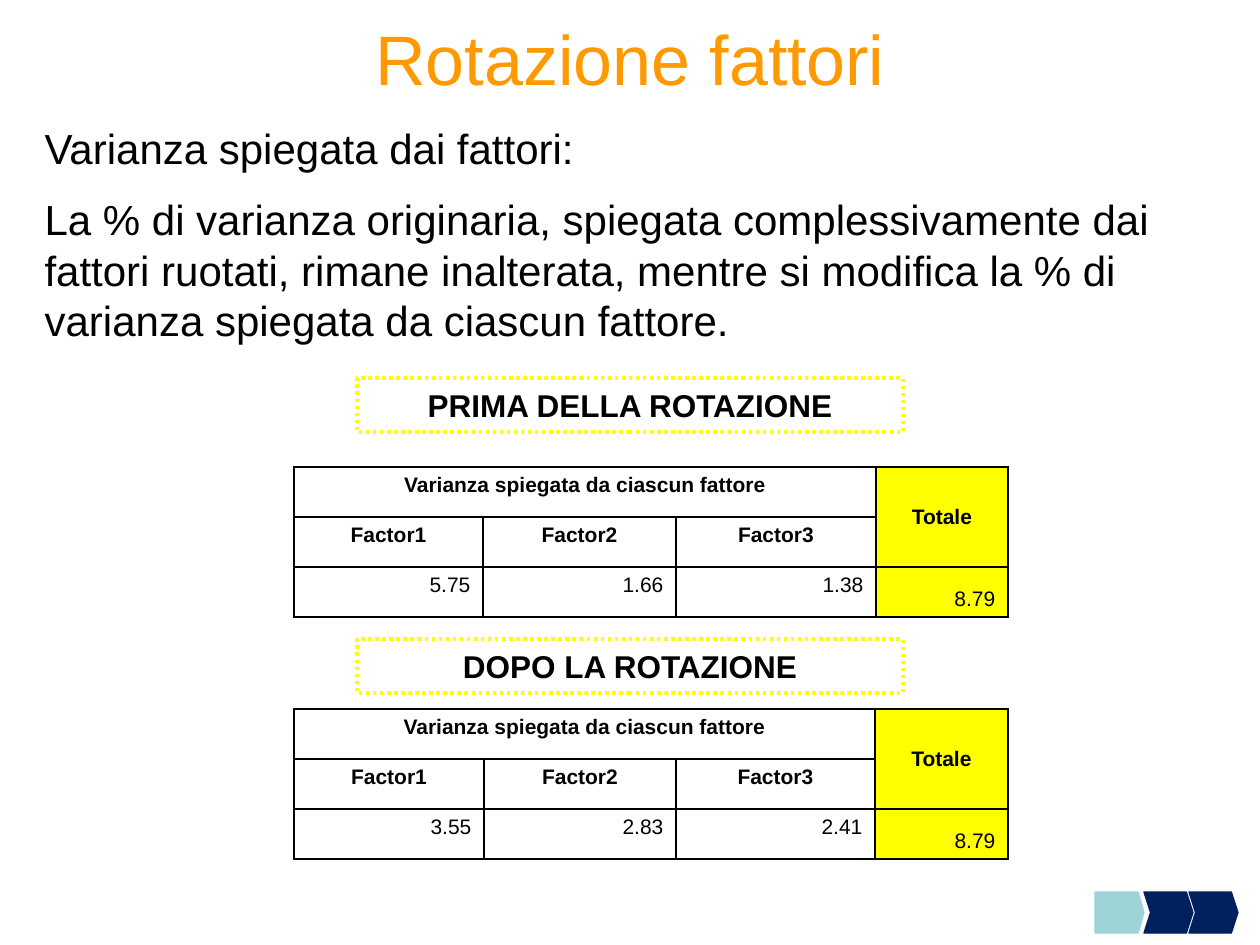
from dataclasses import dataclass

from lxml.etree import SubElement
from pptx import Presentation
from pptx.dml.color import RGBColor
from pptx.enum.dml import MSO_LINE
from pptx.enum.shapes import MSO_SHAPE
from pptx.enum.text import MSO_ANCHOR, PP_ALIGN
from pptx.oxml.ns import qn
from pptx.util import Emu, Pt

PIXELS_PER_INCH = 126


@dataclass(frozen=True)
class Theme:
    font: str = "Arial"
    black: str = "000000"
    white: str = "FFFFFF"
    orange: str = "FF9900"
    yellow: str = "FFFF00"
    navy: str = "002060"
    aqua: str = "9ED3D7"
    title_size: int = 40
    body_size: int = 24
    label_size: int = 18
    table_size: int = 12


@dataclass(frozen=True)
class VarianceTable:
    label: str
    label_top: int
    table_top: int
    column_widths: tuple[int, ...]
    values: tuple[str, ...]


@dataclass(frozen=True)
class Arrow:
    preset: MSO_SHAPE
    left: int
    adjustment: float
    color: str


THEME = Theme()
BODY = (
    "Varianza spiegata dai fattori:",
    "La % di varianza originaria, spiegata complessivamente dai fattori ruotati, "
    "rimane inalterata, mentre si modifica la % di varianza spiegata da ciascun fattore.",
)
TABLES = (
    VarianceTable("PRIMA DELLA ROTAZIONE", 378, 467, (189, 193, 200, 132),
                  ("5.75", "1.66", "1.38", "8.79")),
    VarianceTable("DOPO LA ROTAZIONE", 639, 709, (190, 192, 199, 133),
                  ("3.55", "2.83", "2.41", "8.79")),
)
ARROWS = (
    Arrow(MSO_SHAPE.CHEVRON, 1189, 0.16, THEME.navy),
    Arrow(MSO_SHAPE.PENTAGON, 1095, 0.14, THEME.aqua),
    Arrow(MSO_SHAPE.CHEVRON, 1144, 0.16, THEME.navy),
)
TABLE_LEFT, ROW_HEIGHT = 294, 50


def px(length: int) -> Emu:
    return Emu(round(length * 914400 / PIXELS_PER_INCH))


def rgb(color: str) -> RGBColor:
    return RGBColor.from_string(color)


def place(shape, left: int, top: int, width: int, height: int) -> None:
    shape.left, shape.top = px(left), px(top)
    shape.width, shape.height = px(width), px(height)


def write(frame, *texts: str, size: int, color: str = THEME.black, bold: bool = False,
          align=PP_ALIGN.LEFT, space_before: int = 0) -> None:
    for index, text in enumerate(texts):
        paragraph = frame.add_paragraph() if index else frame.paragraphs[0]
        paragraph.alignment = align
        paragraph.space_before = Pt(space_before)
        run = paragraph.add_run()
        run.text = text
        run.font.name, run.font.size, run.font.bold = THEME.font, Pt(size), bold
        run.font.color.rgb = rgb(color)


def remove_bullets(frame) -> None:
    for paragraph in frame.paragraphs:
        properties = paragraph._p.get_or_add_pPr()
        properties.set("marL", "0")
        properties.set("indent", "0")
        SubElement(properties, qn("a:buNone"))


def format_cell(cell, fill: str) -> None:
    properties = cell._tc.get_or_add_tcPr()
    for side in ("a:lnL", "a:lnR", "a:lnT", "a:lnB"):
        border = SubElement(properties, qn(side), w=str(Pt(1)))
        SubElement(SubElement(border, qn("a:solidFill")), qn("a:srgbClr"), val=THEME.black)
    cell.fill.solid()
    cell.fill.fore_color.rgb = rgb(fill)


def draw_label(slide, text: str, top: int) -> None:
    label = slide.shapes.add_shape(MSO_SHAPE.RECTANGLE, px(357), px(top), px(546), px(54))
    label.shadow.inherit = False
    label.fill.background()
    label.line.color.rgb = rgb(THEME.yellow)
    label.line.width = Pt(2)
    label.line.dash_style = MSO_LINE.ROUND_DOT
    label.text_frame.word_wrap = True
    write(label.text_frame, text, size=THEME.label_size, bold=True, align=PP_ALIGN.CENTER)


def draw_table(slide, data: VarianceTable) -> None:
    frame = slide.shapes.add_table(3, 4, px(TABLE_LEFT), px(data.table_top),
                                   px(sum(data.column_widths)), px(3 * ROW_HEIGHT))
    table = frame.table
    table.first_row = table.horz_banding = False
    for column, width in zip(table.columns, data.column_widths):
        column.width = px(width)
    for row in table.rows:
        row.height = px(ROW_HEIGHT)
        for index, cell in enumerate(row.cells):
            format_cell(cell, THEME.yellow if index == 3 else THEME.white)
    table.cell(0, 0).merge(table.cell(0, 2))
    table.cell(0, 3).merge(table.cell(1, 3))

    headings = {(0, 0): "Varianza spiegata da ciascun fattore", (0, 3): "Totale"}
    headings |= {(1, index): f"Factor{index + 1}" for index in range(3)}
    for position, text in headings.items():
        write(table.cell(*position).text_frame, text, size=THEME.table_size,
              bold=True, align=PP_ALIGN.CENTER)
    for index, value in enumerate(data.values):
        write(table.cell(2, index).text_frame, value, size=THEME.table_size,
              align=PP_ALIGN.RIGHT)
    table.cell(0, 3).vertical_anchor = MSO_ANCHOR.MIDDLE
    table.cell(2, 3).vertical_anchor = MSO_ANCHOR.BOTTOM


def draw_arrow(slide, arrow: Arrow) -> None:
    shape = slide.shapes.add_shape(arrow.preset, px(arrow.left), px(892), px(49), px(41))
    shape.adjustments[0] = arrow.adjustment
    shape.shadow.inherit = False
    shape.fill.solid()
    shape.fill.fore_color.rgb = shape.line.color.rgb = rgb(arrow.color)
    shape.line.width = Pt(0.75)


def main() -> None:
    presentation = Presentation()
    presentation.slide_width, presentation.slide_height = px(1260), px(945)
    slide = presentation.slides.add_slide(presentation.slide_layouts[1])

    # Title and explanation
    title, body = slide.shapes.title, slide.placeholders[1]
    place(title, 63, -21, 1134, 157)
    title.text_frame.vertical_anchor = MSO_ANCHOR.MIDDLE
    write(title.text_frame, "Rotazione fattori", size=THEME.title_size,
          color=THEME.orange, align=PP_ALIGN.CENTER)
    place(body, 32, 116, 1176, 318)
    write(body.text_frame, *BODY, size=THEME.body_size, space_before=12)
    remove_bullets(body.text_frame)

    # Variance before and after the rotation
    for data in TABLES:
        draw_table(slide, data)
        draw_label(slide, data.label, data.label_top)

    # Corner arrows
    for arrow in ARROWS:
        draw_arrow(slide, arrow)

    presentation.save("out.pptx")


if __name__ == "__main__":
    main()
